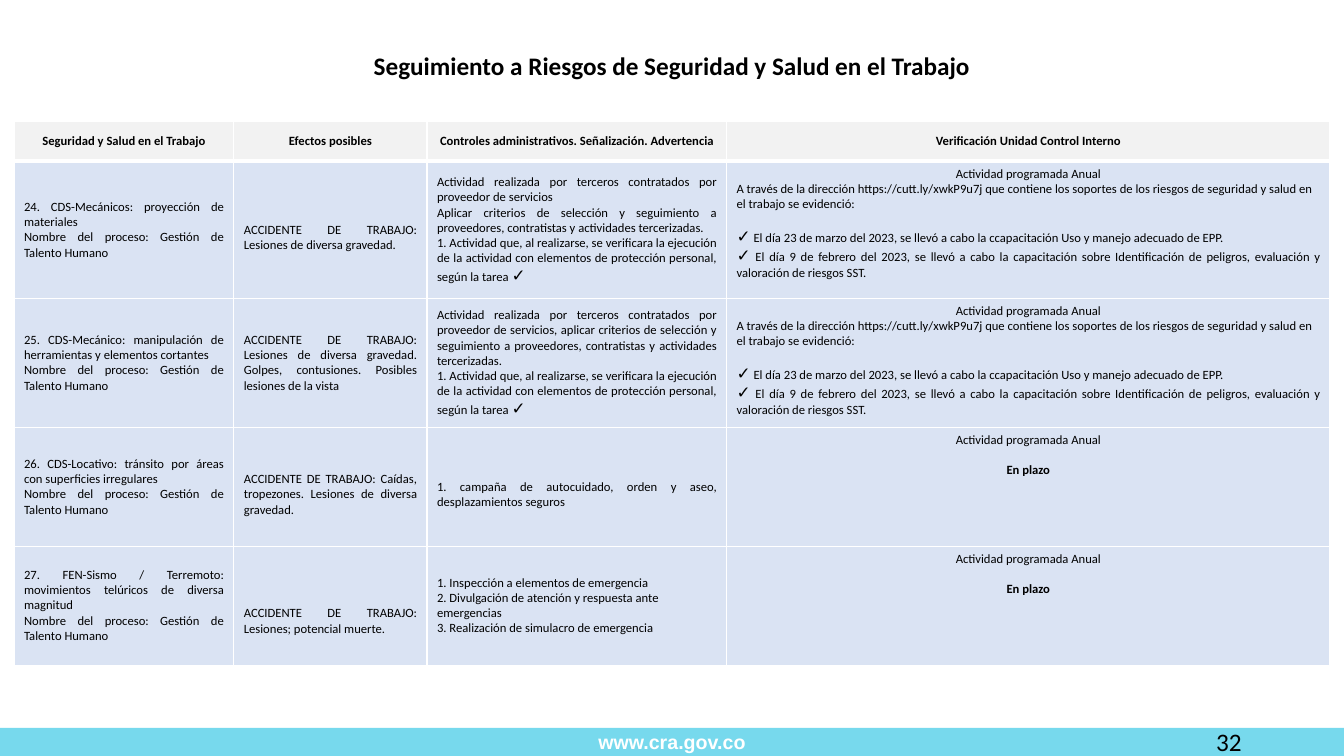
import dataclasses
import itertools

import lxml.etree
import pptx
import pptx.dml.color
import pptx.enum.shapes
import pptx.enum.text
import pptx.oxml.ns
import pptx.util

Pt = pptx.util.Pt
ALIGN = pptx.enum.text.PP_ALIGN
ANCHOR = pptx.enum.text.MSO_ANCHOR


@dataclasses.dataclass(frozen=True)
class Theme:
    text_font: str = "Calibri"
    accent_font: str = "Arial"
    ink: str = "000000"
    white: str = "FFFFFF"
    bar: str = "77D9ED"
    header: str = "F2F2F2"
    body: str = "DAE3F3"
    title_size: float = 18
    footer_size: float = 14
    table_size: float = 9
    check_size: float = 12
    table_line: float = 11
    inset_x: float = 7.2
    inset_y: float = 3.6


@dataclasses.dataclass(frozen=True)
class Line:
    text: str
    align: ALIGN = ALIGN.JUSTIFY
    bold: bool = False
    gap: float = 0


@dataclasses.dataclass(frozen=True)
class Entry:
    lines: list
    anchor: ANCHOR = ANCHOR.MIDDLE
    drop: float = 0


THEME = Theme()
CHECK = "✓"
SLIDE = (960, 540)
TITLE_BOX = (10, 32.4, 940, 28.8)
TABLE_BOX = (10, 86.4, 940, 388.8)
FOOTER_BOX = (0, 520, 960, 20)
COLUMNS = (157, 138, 214, 431)
ROWS = (28.8, 97.9, 92.1, 85, 85)

HEADINGS = (
    "Seguridad y Salud en el Trabajo",
    "Efectos posibles",
    "Controles administrativos. Señalización. Advertencia",
    "Verificación Unidad Control Interno",
)
PROCESS = Line("Nombre del proceso: Gestión de Talento Humano")
ANNUAL = Line("Actividad programada Anual", ALIGN.CENTER)
PROTECTION = Line(
    "1. Actividad que, al realizarse, se verificara la ejecución de la actividad "
    "con elementos de protección personal, según la tarea ✓"
)
EVIDENCE = Entry([
    ANNUAL,
    Line("A través de la dirección https://cutt.ly/xwkP9u7j que contiene los soportes "
         "de los riesgos de seguridad y salud en el trabajo se evidenció:", ALIGN.LEFT),
    Line("✓ El día 23 de marzo del 2023, se llevó a cabo la ccapacitación Uso y manejo "
         "adecuado de EPP.", gap=THEME.table_line),
    Line("✓ El día 9 de febrero del 2023, se llevó a cabo la capacitación "
         "sobre Identificación de peligros, evaluación y valoración de riesgos SST."),
], ANCHOR.TOP)
ON_TIME = Entry([
    ANNUAL,
    Line("En plazo", ALIGN.CENTER, True, THEME.table_line),
], ANCHOR.TOP)

RISKS = (
    (
        Entry([Line("24. CDS-Mecánicos: proyección de materiales"), PROCESS]),
        Entry([Line("ACCIDENTE DE TRABAJO: Lesiones de diversa gravedad.")],
              drop=THEME.table_line),
        Entry([
            Line("Actividad realizada por terceros contratados por proveedor de servicios"),
            Line("Aplicar criterios de selección y seguimiento a proveedores, contratistas "
                 "y actividades tercerizadas."),
            PROTECTION,
        ]),
        EVIDENCE,
    ),
    (
        Entry([Line("25. CDS-Mecánico: manipulación de herramientas y elementos cortantes"),
               PROCESS]),
        Entry([Line("ACCIDENTE DE TRABAJO: Lesiones de diversa gravedad. Golpes, "
                    "contusiones. Posibles lesiones de la vista")]),
        Entry([
            Line("Actividad realizada por terceros contratados por proveedor de servicios, "
                 "aplicar criterios de selección y seguimiento a proveedores, contratistas "
                 "y actividades tercerizadas."),
            PROTECTION,
        ]),
        EVIDENCE,
    ),
    (
        Entry([Line("26. CDS-Locativo: tránsito por áreas con superficies irregulares"),
               PROCESS]),
        Entry([Line("ACCIDENTE DE TRABAJO: Caídas, tropezones. Lesiones de diversa "
                    "gravedad.")], drop=THEME.table_line),
        Entry([Line("1. campaña de autocuidado, orden y aseo, desplazamientos seguros")],
              drop=THEME.table_line),
        ON_TIME,
    ),
    (
        Entry([Line("27. FEN-Sismo / Terremoto: movimientos telúricos de diversa magnitud"),
               PROCESS]),
        Entry([Line("ACCIDENTE DE TRABAJO: Lesiones; potencial muerte.")],
              drop=2 * THEME.table_line),
        Entry([
            Line("1. Inspección a elementos de emergencia", ALIGN.LEFT),
            Line("2. Divulgación de atención y respuesta ante emergencias", ALIGN.LEFT),
            Line("3. Realización de simulacro de emergencia", ALIGN.LEFT),
        ]),
        ON_TIME,
    ),
)


def apply(target, values):
    for name, value in values.items():
        setattr(target, name, value)


def paint(fill, color):
    fill.solid()
    fill.fore_color.rgb = pptx.dml.color.RGBColor.from_string(color)


def write(paragraph, line, size, font=THEME.text_font, color=THEME.ink):
    apply(paragraph, {"alignment": line.align, "space_before": Pt(line.gap)})
    for is_check, letters in itertools.groupby(line.text, lambda letter: letter == CHECK):
        run = paragraph.add_run()
        run.text = "".join(letters)
        apply(run.font, {
            "name": THEME.accent_font if is_check else font,
            "size": Pt(THEME.check_size if is_check else size),
            "bold": line.bold,
        })
        run.font.color.rgb = pptx.dml.color.RGBColor.from_string(color)


def frame_text(frame, anchor):
    apply(frame, {
        "word_wrap": True, "vertical_anchor": anchor,
        "margin_left": Pt(THEME.inset_x), "margin_right": Pt(THEME.inset_x),
        "margin_top": Pt(THEME.inset_y), "margin_bottom": Pt(THEME.inset_y),
    })


def place_title(slide, box):
    title = slide.shapes.title
    apply(title, dict(zip(("left", "top", "width", "height"), map(Pt, box))))
    frame_text(title.text_frame, ANCHOR.MIDDLE)
    title.text_frame.auto_size = pptx.enum.text.MSO_AUTO_SIZE.NONE
    write(title.text_frame.paragraphs[0],
          Line("Seguimiento a Riesgos de Seguridad y Salud en el Trabajo", ALIGN.CENTER, True),
          THEME.title_size)


def fill_cell(cell, entry, color, borders):
    properties = cell._tc.get_or_add_tcPr()
    for side, width in borders.items():
        edge = lxml.etree.SubElement(properties, pptx.oxml.ns.qn("a:ln" + side), w=str(Pt(width)))
        solid = lxml.etree.SubElement(edge, pptx.oxml.ns.qn("a:solidFill"))
        lxml.etree.SubElement(solid, pptx.oxml.ns.qn("a:srgbClr"), val=THEME.white)
    paint(cell.fill, color)
    apply(cell, {"vertical_anchor": entry.anchor, "margin_top": Pt(THEME.inset_y + entry.drop)})
    for index, line in enumerate(entry.lines):
        frame = cell.text_frame
        write(frame.add_paragraph() if index else frame.paragraphs[0], line, THEME.table_size)


def place_risks(slide, box):
    headings = [Entry([Line(heading, ALIGN.CENTER, True)]) for heading in HEADINGS]
    records = (headings, *RISKS)
    table = slide.shapes.add_table(len(ROWS), len(COLUMNS), *map(Pt, box)).table
    for column, width in zip(table.columns, COLUMNS):
        column.width = Pt(width)
    for index, (row, height, record) in enumerate(zip(table.rows, ROWS, records)):
        row.height = Pt(height)
        borders = {"L": 1, "R": 1, "T": 3 if index == 1 else 1, "B": 1 if index else 3}
        for cell, entry in zip(row.cells, record):
            fill_cell(cell, entry, THEME.body if index else THEME.header, borders)


def place_footer(slide, box):
    left, top, width, height = box
    bar = slide.shapes.add_shape(pptx.enum.shapes.MSO_SHAPE.RECTANGLE, *map(Pt, box))
    bar.shadow.inherit = False
    bar.line.fill.background()
    paint(bar.fill, THEME.bar)
    frame_text(bar.text_frame, ANCHOR.MIDDLE)
    write(bar.text_frame.paragraphs[0], Line("www.cra.gov.co", ALIGN.CENTER, True),
          THEME.footer_size, THEME.accent_font, THEME.white)
    number = slide.shapes.add_textbox(Pt(left + width - 282), Pt(top - 4.4), Pt(216), Pt(28.8))
    frame_text(number.text_frame, ANCHOR.TOP)
    write(number.text_frame.paragraphs[0], Line("32", ALIGN.RIGHT), THEME.title_size)


def main():
    deck = pptx.Presentation()
    apply(deck, dict(zip(("slide_width", "slide_height"), map(Pt, SLIDE))))
    slide = deck.slides.add_slide(deck.slide_layouts[5])
    place_footer(slide, FOOTER_BOX)
    place_title(slide, TITLE_BOX)
    place_risks(slide, TABLE_BOX)
    deck.save("out.pptx")


if __name__ == "__main__":
    main()
